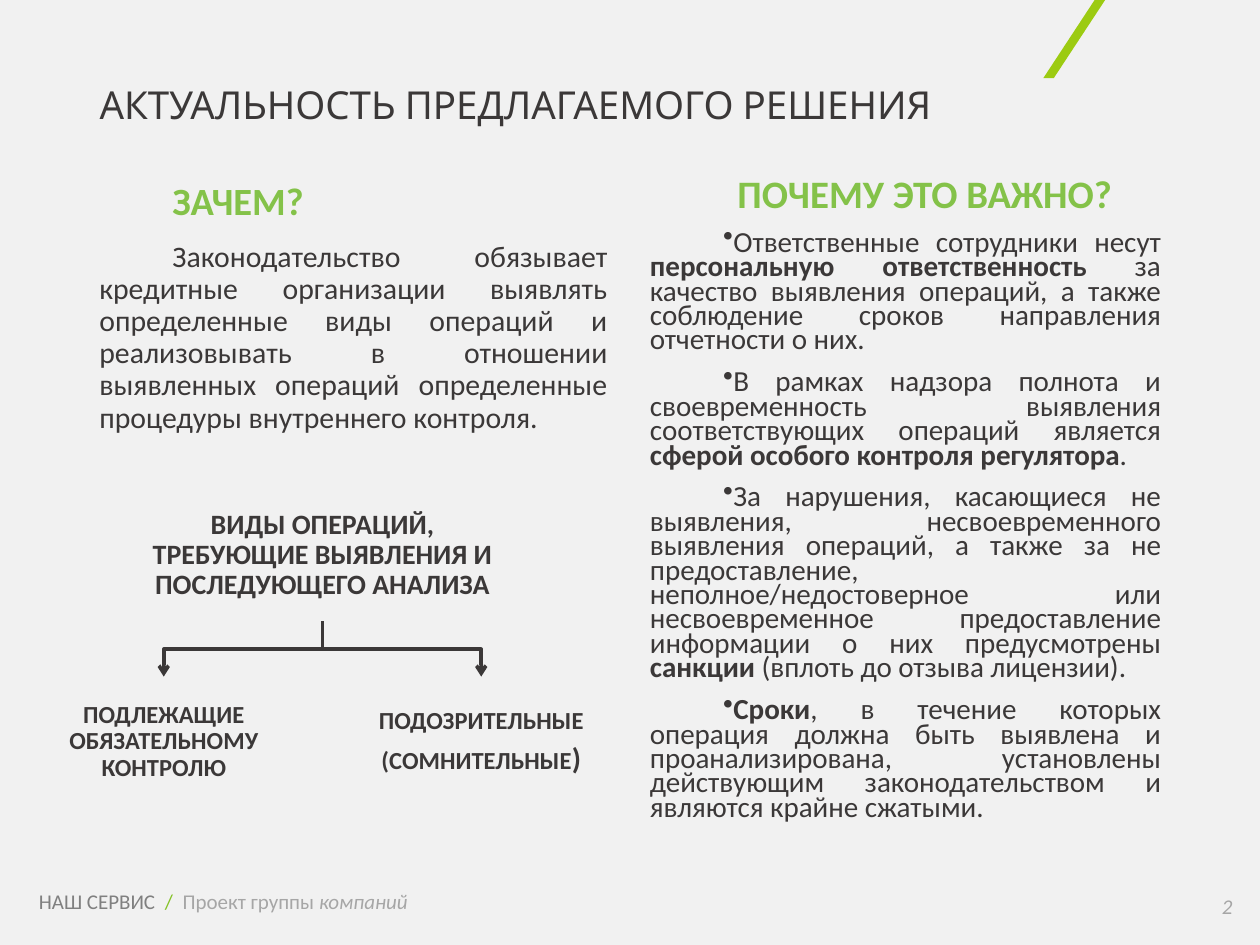
from pptx import Presentation
from pptx.dml.color import RGBColor
from pptx.enum import shapes, text
from pptx.oxml.ns import qn
from pptx.util import Pt
from lxml import etree

DARK = RGBColor(0x3B, 0x38, 0x38)
GREEN = RGBColor(0x84, 0xC2, 0x49)
SLASH_GREEN = RGBColor(0x84, 0xC2, 0x25)
ACCENT = RGBColor(0x9C, 0xCB, 0x12)
GREY = RGBColor(0x80, 0x80, 0x80)
LIGHT_GREY = RGBColor(0xA6, 0xA6, 0xA6)
BACKGROUND = RGBColor(0xF1, 0xF1, 0xF1)

LEFT, CENTER, RIGHT, JUSTIFY = (text.PP_ALIGN.LEFT, text.PP_ALIGN.CENTER,
                                text.PP_ALIGN.RIGHT, text.PP_ALIGN.JUSTIFY)
TOP, MIDDLE = text.MSO_ANCHOR.TOP, text.MSO_ANCHOR.MIDDLE

TITLE = "АКТУАЛЬНОСТЬ ПРЕДЛАГАЕМОГО РЕШЕНИЯ"
WHY = "ЗАЧЕМ?"
WHY_TEXT = ("Законодательство обязывает кредитные организации выявлять определенные "
            "виды операций и реализовывать в отношении выявленных операций "
            "определенные процедуры внутреннего контроля.")
IMPORTANCE = "ПОЧЕМУ ЭТО ВАЖНО?"
REASONS = [
    [("Ответственные сотрудники несут ", False),
     ("персональную ответственность", True),
     (" за качество выявления операций, а также соблюдение сроков направления "
      "отчетности о них.", False)],
    [("В рамках надзора полнота и своевременность выявления соответствующих "
      "операций является ", False),
     ("сферой особого контроля регулятора", True),
     (".", False)],
    [("За нарушения, касающиеся не выявления, несвоевременного выявления операций, "
      "а также за не предоставление, неполное/недостоверное или несвоевременное "
      "предоставление информации о них предусмотрены ", False),
     ("санкции", True),
     (" (вплоть до отзыва лицензии).", False)],
    [("Сроки", True),
     (", в течение которых операция должна быть выявлена и проанализирована, "
      "установлены действующим законодательством и являются крайне сжатыми.", False)],
]
TREE_ROOT = "ВИДЫ ОПЕРАЦИЙ, ТРЕБУЮЩИЕ ВЫЯВЛЕНИЯ И ПОСЛЕДУЮЩЕГО АНАЛИЗА"
MANDATORY = "ПОДЛЕЖАЩИЕ ОБЯЗАТЕЛЬНОМУ КОНТРОЛЮ"
SUSPICIOUS = ["ПОДОЗРИТЕЛЬНЫЕ", "(СОМНИТЕЛЬНЫЕ"]
FOOTER = [("НАШ СЕРВИС  ", GREY, False), ("/  ", SLASH_GREEN, False),
          ("Проект группы ", LIGHT_GREY, False), ("компаний", LIGHT_GREY, True)]

ROOT_X, BRANCH_OFFSET = 184.3, 90.7
FORK_TOP, FORK_MIDDLE, FORK_BOTTOM = 355, 371, 386.6
NODE_HEIGHT = 67.6


def add_box(slide, left, top, width, height, anchor=TOP, inset=None):
    box = slide.shapes.add_textbox(Pt(left), Pt(top), Pt(width), Pt(height))
    frame = box.text_frame
    frame.word_wrap = True
    frame.vertical_anchor = anchor
    if inset is not None:
        frame.margin_left = frame.margin_right = Pt(inset)
        frame.margin_top = frame.margin_bottom = Pt(inset)
    return frame


def add_para(frame, spans, size, color, align, line=None, bold=None, indent=0,
             before=0, after=0, bullet=None, name="Calibri"):
    first = frame.paragraphs[0]
    is_first = not first.runs
    para = first if is_first else frame.add_paragraph()
    para.alignment = align
    if line:
        para.line_spacing = line
    if before and not is_first:
        para.space_before = Pt(before)
    if after:
        para.space_after = Pt(after)
    props = para._p.get_or_add_pPr()
    if indent:
        props.set("marL", "0")
        props.set("indent", str(Pt(indent)))
    if bullet:
        etree.SubElement(props, qn("a:buChar")).set("char", bullet)
    para.font.name, para.font.size, para.font.bold = name, Pt(size), bold
    para.font.color.rgb = color
    for content, is_bold in spans:
        span = para.add_run()
        span.text = content
        if is_bold is not None:
            span.font.bold = is_bold
    return para


def add_branch(slide, end_x):
    builder = slide.shapes.build_freeform(Pt(ROOT_X), Pt(FORK_TOP))
    builder.add_line_segments(
        [(Pt(ROOT_X), Pt(FORK_MIDDLE)), (Pt(end_x), Pt(FORK_MIDDLE)),
         (Pt(end_x), Pt(FORK_BOTTOM))], close=False)
    branch = builder.convert_to_shape()
    branch.shadow.inherit = False
    branch.fill.background()
    branch.line.color.rgb = DARK
    branch.line.width = Pt(2)
    etree.SubElement(branch.line._get_or_add_ln(), qn("a:tailEnd")).set("type", "arrow")


def add_node(slide, center_x, top, width):
    return add_box(slide, center_x - width / 2, top, width, NODE_HEIGHT, MIDDLE, 0.7)


def main():
    deck = Presentation()
    deck.slide_width, deck.slide_height = Pt(720), Pt(540)
    slide = deck.slides.add_slide(deck.slide_layouts[5])
    slide.background.fill.solid()
    slide.background.fill.fore_color.rgb = BACKGROUND

    title = slide.shapes.title
    title.left, title.top, title.width, title.height = Pt(49.7), Pt(28.8), Pt(620.6), Pt(64.8)
    title.text_frame.auto_size = text.MSO_AUTO_SIZE.NONE
    title.text_frame.vertical_anchor = MIDDLE
    add_para(title.text_frame, [(TITLE, None)], 22, DARK, LEFT, 0.9, name="Karla")

    stripe = slide.shapes.add_shape(shapes.MSO_SHAPE.PARALLELOGRAM,
                                    Pt(596.2), Pt(0), Pt(35.3), Pt(44.6))
    stripe.adjustments[0] = 0.83
    stripe.shadow.inherit = False
    stripe.fill.solid()
    stripe.fill.fore_color.rgb = ACCENT
    stripe.line.fill.background()

    why = add_box(slide, 49.7, 100.8, 304.6, 386.6)
    add_para(why, [(WHY, None)], 22, GREEN, JUSTIFY, 0.9, True, 41.8)
    add_para(why, [(WHY_TEXT, None)], 17, DARK, JUSTIFY, 0.9, indent=41.8, before=10)

    importance = add_box(slide, 364.3, 100.8, 306, 386.6)
    add_para(importance, [(IMPORTANCE, None)], 22.2, GREEN, CENTER, 0.7, True, 22.3)
    for reason in REASONS:
        add_para(importance, reason, 16.6, DARK, JUSTIFY, 0.7, indent=41.8,
                 before=10, bullet="•")

    left_x, right_x = ROOT_X - BRANCH_OFFSET, ROOT_X + BRANCH_OFFSET
    for end_x in (right_x, left_x):
        add_branch(slide, end_x)
    node = {"color": DARK, "align": CENTER, "line": 0.9, "bold": True, "after": 5}
    add_para(add_node(slide, ROOT_X, 283.7, 206), [(TREE_ROOT, None)], 16, **node)
    add_para(add_node(slide, left_x, 390.2, 142.6), [(MANDATORY, None)], 14, **node)
    suspicious = add_node(slide, right_x, 390.2, 142.6)
    for label in SUSPICIOUS:
        para = add_para(suspicious, [(label, None)], 14, **node)
    bracket = para.add_run()
    bracket.text = ")"
    bracket.font.size = Pt(17)

    footer = add_box(slide, 15.1, 504, 289.4, 21.6)
    line = add_para(footer, [(content, None) for content, _, _ in FOOTER],
                    12, LIGHT_GREY, LEFT)
    for span, (_, color, italic) in zip(line.runs, FOOTER):
        span.font.color.rgb = color
        span.font.italic = italic

    number = add_box(slide, 549.4, 503.3, 162, 28.8, MIDDLE)
    add_para(number, [("2", None)], 12, LIGHT_GREY, RIGHT).font.italic = True

    deck.save("out.pptx")


if __name__ == "__main__":
    main()
